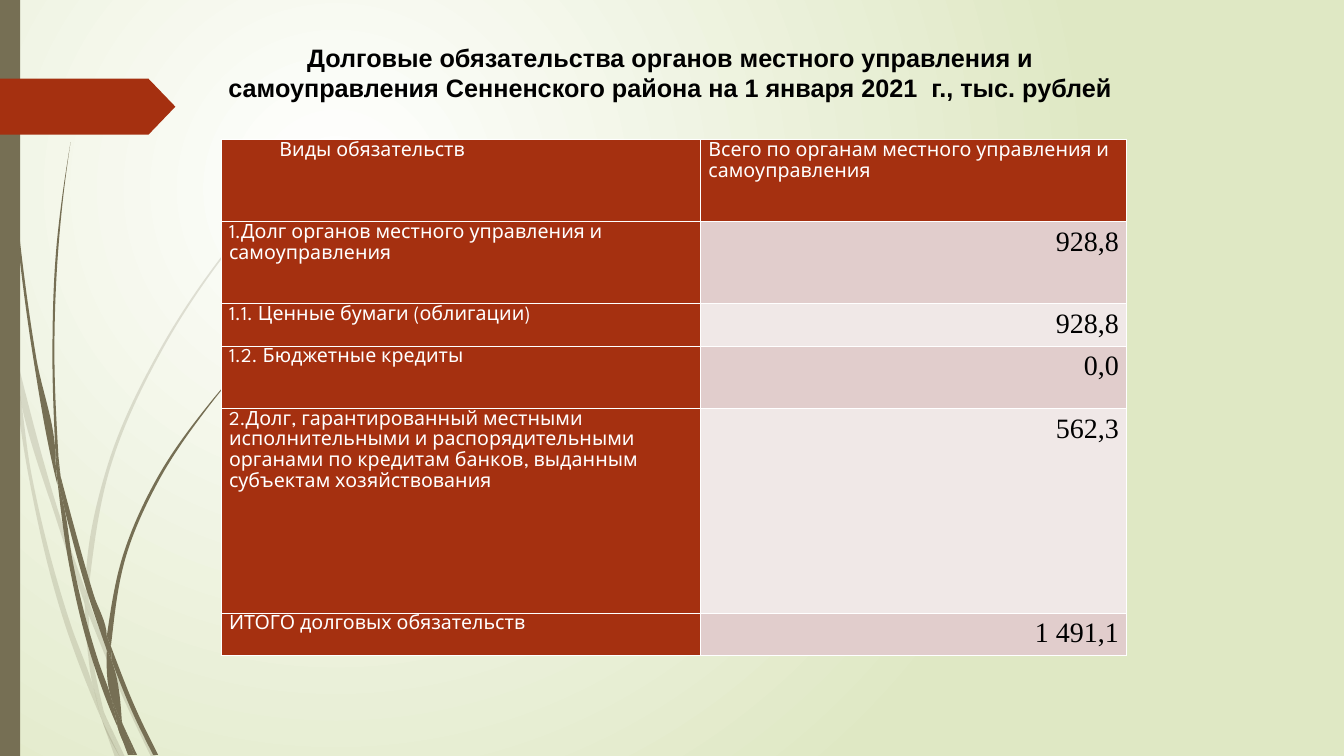
import lxml.etree
import pptx
import pptx.dml.color
import pptx.enum.shapes
import pptx.enum.text
import pptx.oxml
import pptx.oxml.ns
import pptx.util

Pt = pptx.util.Pt
qn = pptx.oxml.ns.qn
ALIGN = pptx.enum.text.PP_ALIGN
ANCHOR = pptx.enum.text.MSO_ANCHOR
SHAPE = pptx.enum.shapes.MSO_SHAPE

OLIVE, RUST, WHITE, BLACK = "766F54", "A53010", "FFFFFF", "000000"
BANDS = ["E1CDCC", "F0E8E7"]

# A blade is a list of smooth edges, joined by straight lines, on this grid.
GRID = Pt(0.72)
PALE_BLADES = [
    [[(11, 350), (9, 322), (0, 282)], [(0, 299), (10, 344), (11, 350)]],
    [[(14, 345), (17, 376), (58, 522), (84, 599)], [(85, 586), (62, 520), (14, 345)]],
    [[(88, 610), (123, 694), (150, 751)], [(155, 751), (127, 692), (92, 607), (88, 596)]],
    [[(105, 711), (119, 751)], [(124, 751), (105, 711)]],
    [[(11, 350), (28, 470), (65, 621), (92, 693), (101, 714)],
     [(99, 707), (93, 683), (70, 619), (31, 469), (17, 376), (11, 350)]],
    [[(84, 599), (87, 646), (93, 683), (96, 692), (105, 711)],
     [(103, 706), (91, 646), (88, 610), (88, 608)]],
    [[(312, 153), (289, 175), (268, 197), (228, 244), (158, 348), (107, 461), (85, 584),
      (85, 586)], [(88, 596)],
     [(88, 584), (110, 462), (160, 349), (229, 245), (268, 198), (290, 175), (312, 154)]],
    [[(101, 714), (114, 751)], [(119, 751), (101, 714)]],
    [[(85, 586), (84, 599)], [(88, 608), (88, 610)], [(88, 596), (85, 586)]],
    [[(93, 683), (99, 707), (101, 714), (119, 751)], [(105, 711), (96, 692), (93, 683)]],
]
DARK_BLADES = [
    [[(3, 0), (4, 48), (7, 110), (17, 233), (33, 355), (56, 477), (57, 481)],
     [(55, 457), (55, 453), (36, 355), (19, 232), (8, 109), (5, 48), (4, 0)]],
    [[(64, 505), (88, 592), (106, 645)], [(106, 633), (106, 631), (93, 590), (60, 472)]],
    [[(111, 656), (132, 708), (152, 749)], [(157, 749), (136, 706), (113, 649), (110, 641)]],
    [[(57, 477), (68, 557), (93, 659), (111, 708), (117, 722)],
     [(116, 717), (110, 691), (98, 657), (72, 556), (64, 505), (57, 477)]],
    [[(70, 141), (62, 193), (56, 245), (52, 349), (55, 449)], [(60, 472)],
     [(58, 453), (54, 349), (58, 245), (63, 193), (70, 141)]],
    [[(122, 719), (133, 749)], [(136, 749), (122, 719)]],
    [[(55, 449), (55, 453), (57, 477)], [(64, 505), (60, 472), (55, 449)]],
    [[(260, 344), (245, 358), (231, 373), (204, 405), (156, 474), (122, 551), (106, 631)],
     [(110, 641)],
     [(111, 633), (125, 552), (158, 476), (205, 406), (231, 374), (245, 359), (261, 344)]],
    [[(117, 722), (127, 749)], [(131, 749), (117, 722)]],
    [[(106, 645), (110, 691), (116, 706), (122, 719)],
     [(121, 716), (111, 656), (109, 651), (106, 645)]],
    [[(106, 631), (106, 645)], [(109, 651), (111, 656)], [(110, 641), (106, 631)]],
    [[(110, 691), (116, 717), (117, 722), (130, 749)],
     [(133, 749), (122, 719), (116, 706), (110, 691)]],
]

TITLE = ("Долговые обязательства органов местного управления и самоуправления "
         "Сенненского района на 1 января 2021  г., тыс. рублей")
COLUMN_WIDTHS = [342.4, 304.1]
ROW_HEIGHTS = [58.5, 58.5, 30.4, 44.6, 146.2, 30.3]
DEBT_ROWS = [
    ("Виды обязательств", "Всего по органам местного управления и самоуправления"),
    ("1.Долг органов местного управления и самоуправления", " 928,8"),
    ("1.1. Ценные бумаги (облигации)", " 928,8"),
    ("1.2. Бюджетные кредиты", "0,0"),
    ("2.Долг, гарантированный местными исполнительными и распорядительными органами "
     "по кредитам банков, выданным субъектам хозяйствования", "562,3"),
    ("ИТОГО долговых обязательств", "1 491,1"),
]


def color(hex_string):
    return pptx.dml.color.RGBColor.from_string(hex_string)


def paint(shape, fill, opacity=100):
    shape.shadow.inherit = False
    shape.line.fill.background()
    shape.fill.solid()
    shape.fill.fore_color.rgb = color(fill)
    if opacity < 100:
        fill_color = shape.element.spPr.find(".//" + qn("a:srgbClr"))
        lxml.etree.SubElement(fill_color, qn("a:alpha")).set("val", str(opacity * 1000))


def set_background(slide, center, edge):
    """Radial gradient centred in the upper left quarter of the slide."""
    fill = slide.background.fill
    fill.gradient()
    for stop, hex_string in zip(fill.gradient_stops, (center, edge)):
        stop.color.rgb = color(hex_string)
    gradient = slide.element.find(".//" + qn("a:gradFill"))
    circle = pptx.oxml.parse_xml(
        f'<a:path {pptx.oxml.ns.nsdecls("a")} path="circle">'
        '<a:fillToRect l="50000" t="50000" r="100000" b="100000"/></a:path>')
    gradient.replace(gradient.find(qn("a:lin")), circle)


def smooth_segments(edge):
    """Bezier segments (two controls and an end, as complex numbers) through an edge."""
    lengths = [abs(b - a) for a, b in zip(edge, edge[1:])]
    slopes = [(b - a) / length for a, b, length in zip(edge, edge[1:], lengths)]
    inner = [(h * s + g * r) / (g + h)
             for g, h, r, s in zip(lengths[1:], lengths, slopes, slopes[1:])]
    if inner:
        tangents = [(3 * slopes[0] - inner[0]) / 2, *inner, (3 * slopes[-1] - inner[-1]) / 2]
    else:
        tangents = slopes * 2
    return [(a + m * h / 3, b - n * h / 3, b) for a, b, m, n, h in
            zip(edge, edge[1:], tangents, tangents[1:], lengths)]


def add_blade(slide, edges, opacity):
    edges = [[complex(x, y) * GRID for x, y in edge] for edge in edges]
    segments = []
    for edge in edges:
        segments += [(edge[0],)] + smooth_segments(edge)
    ends = [(segment[-1].real, segment[-1].imag) for segment in segments]
    builder = slide.shapes.build_freeform(*ends[0])
    builder.add_line_segments(ends[1:], close=True)
    blade = builder.convert_to_shape()
    paint(blade, OLIVE, opacity)
    lines = list(blade.element.iter(qn("a:lnTo")))
    for line, segment in zip(lines, segments[1:]):
        if len(segment) == 3:
            bend(line, segment, complex(blade.left, blade.top))


def bend(line, segment, corner):
    """Turn a straight path step into a Bezier step."""
    curve = lxml.etree.Element(qn("a:cubicBezTo"))
    for point in segment:
        local = point - corner
        lxml.etree.SubElement(curve, qn("a:pt"), x=str(round(local.real)),
                              y=str(round(local.imag)))
    line.getparent().replace(line, curve)


def add_block(slide, preset, left, top, width, height, fill):
    shape = slide.shapes.add_shape(preset, Pt(left), Pt(top), Pt(width), Pt(height))
    paint(shape, fill)
    return shape


def write(paragraph, text, font, size, hex_string, align=ALIGN.LEFT, bold=False):
    paragraph.alignment = align
    run = paragraph.add_run()
    run.text = text
    run.font.name = font
    run.font.size = Pt(size)
    run.font.bold = bold
    run.font.color.rgb = color(hex_string)


def set_borders(cell, hex_string, width):
    properties = cell._tc.get_or_add_tcPr()
    for index, side in enumerate("LRTB"):
        properties.insert(index, pptx.oxml.parse_xml(
            f'<a:ln{side} {pptx.oxml.ns.nsdecls("a")} w="{Pt(width)}"><a:solidFill>'
            f'<a:srgbClr val="{hex_string}"/></a:solidFill></a:ln{side}>'))


def fill_cell(cell, text, is_label, fill):
    cell.margin_left = cell.margin_right = Pt(5.4)
    cell.margin_top = cell.margin_bottom = Pt(0)
    cell.fill.solid()
    cell.fill.fore_color.rgb = color(fill)
    set_borders(cell, WHITE, 1)
    paragraph = cell.text_frame.paragraphs[0]
    paragraph.line_spacing = 1.15
    if is_label:
        write(paragraph, text, "League Spartan", 14, WHITE)
    else:
        write(paragraph, text, "Times New Roman", 20, BLACK, ALIGN.RIGHT)


def add_debt_table(slide, left, top):
    table = slide.shapes.add_table(
        len(ROW_HEIGHTS), len(COLUMN_WIDTHS), Pt(left), Pt(top),
        Pt(sum(COLUMN_WIDTHS)), Pt(sum(ROW_HEIGHTS))).table
    table.first_row = table.horz_banding = False
    for column, width in zip(table.columns, COLUMN_WIDTHS):
        column.width = Pt(width)
    for row_index, (height, texts) in enumerate(zip(ROW_HEIGHTS, DEBT_ROWS)):
        table.rows[row_index].height = Pt(height)
        for column_index, text in enumerate(texts):
            is_label = row_index == 0 or column_index == 0
            fill = RUST if is_label else BANDS[(row_index - 1) % 2]
            fill_cell(table.cell(row_index, column_index), text, is_label, fill)
    first_paragraph = table.cell(0, 0).text_frame.paragraphs[0]
    first_paragraph._p.get_or_add_pPr().set("marL", str(Pt(36)))


def add_title(slide, left, top, width, height):
    frame = slide.shapes.add_textbox(Pt(left), Pt(top), Pt(width), Pt(height)).text_frame
    frame.word_wrap = True
    frame.vertical_anchor = ANCHOR.MIDDLE
    write(frame.paragraphs[0], TITLE, "Arial", 18, BLACK, ALIGN.CENTER, bold=True)


def main():
    presentation = pptx.Presentation()
    presentation.slide_width, presentation.slide_height = Pt(960), Pt(540)
    slide = presentation.slides.add_slide(presentation.slide_layouts[6])
    set_background(slide, WHITE, "DFE8C4")
    for blades, opacity in ((PALE_BLADES, 20), (DARK_BLADES, 100)):
        for edges in blades:
            add_blade(slide, edges, opacity)
    add_block(slide, SHAPE.RECTANGLE, 0, 0, 14.4, 540, OLIVE)
    page_arrow = add_block(slide, SHAPE.PENTAGON, 0, 56.2, 125.3, 40, RUST)
    page_arrow.adjustments[0] = 0.48
    add_debt_table(slide, 158.2, 99.9)
    add_title(slide, 152.6, 26, 652.3, 51)
    presentation.save("out.pptx")


if __name__ == "__main__":
    main()
